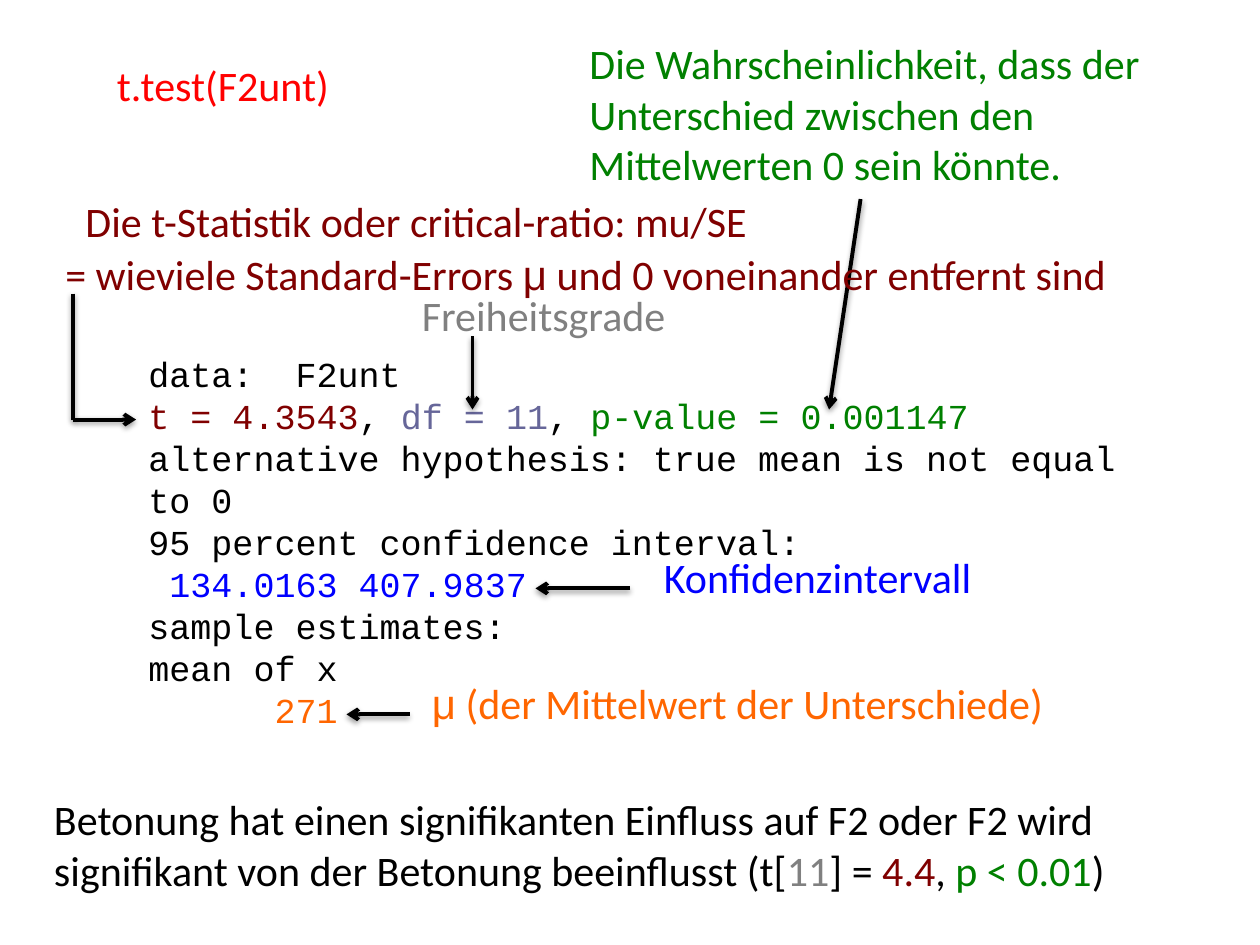
from lxml import etree
from pptx import Presentation
from pptx.dml.color import RGBColor
from pptx.enum.shapes import MSO_CONNECTOR
from pptx.enum.text import MSO_AUTO_SIZE
from pptx.oxml import parse_xml
from pptx.oxml.ns import nsdecls, qn
from pptx.util import Inches, Pt

STRAIGHT = MSO_CONNECTOR.STRAIGHT
FIT_SHAPE = MSO_AUTO_SIZE.SHAPE_TO_FIT_TEXT
BLANK_LAYOUT = 6

BLACK = RGBColor(0x00, 0x00, 0x00)
RED = RGBColor(0xFF, 0x00, 0x00)
MAROON = RGBColor(0x80, 0x00, 0x00)
GREEN = RGBColor(0x00, 0x80, 0x00)
BLUE = RGBColor(0x00, 0x00, 0xFF)
ORANGE = RGBColor(0xFF, 0x66, 0x00)
GRAY = RGBColor(0x80, 0x80, 0x80)
SLATE = RGBColor(0x66, 0x66, 0x99)

SOFT_SHADOW = (
    f'<a:effectLst {nsdecls("a")}>'
    '<a:outerShdw blurRad="40000" dist="20000" dir="5400000" rotWithShape="0">'
    '<a:srgbClr val="000000"><a:alpha val="38000"/></a:srgbClr>'
    '</a:outerShdw></a:effectLst>'
)

# Each paragraph is a list of (text, colour) spans
TEST_OUTPUT = [
    [("data:  F2unt", BLACK)],
    [("t = 4.3543", MAROON), (", ", BLACK), ("df = 11", SLATE),
     (", ", BLACK), ("p-value = 0.001147", GREEN)],
    [("alternative hypothesis: true mean is not equal to 0", BLACK)],
    [("95 percent confidence interval:", BLACK)],
    [(" ", BLACK), ("134.0163 407.9837", BLUE)],
    [("sample estimates:", BLACK)],
    [("mean of x", BLACK)],
    [("      ", BLACK), ("271", ORANGE)],
]
CONCLUSION = [[
    ("Betonung hat einen signifikanten Einfluss auf F2 oder F2 wird "
     "signifikant von der Betonung beeinflusst (t[", BLACK),
    ("11", GRAY), ("] = ", BLACK), ("4.4", MAROON), (", ", BLACK),
    ("p < 0.01", GREEN), (")", BLACK),
]]


def add_span(para, text, *, color, size=24, font="Calibri"):
    span = para.add_run()
    span.text = text
    span.font.name = font
    span.font.size = Pt(size)
    span.font.color.rgb = color


def add_text(shapes, paragraphs, left, top, width, height=0.5, **text_format):
    box = shapes.add_textbox(Inches(left), Inches(top), Inches(width), Inches(height))
    frame = box.text_frame
    frame.word_wrap = True
    frame.auto_size = FIT_SHAPE
    for index, spans in enumerate(paragraphs):
        para = frame.add_paragraph() if index else frame.paragraphs[0]
        for text, color, *font in spans:
            span_format = {"font": font[0]} if font else text_format
            add_span(para, text, color=color, **span_format)


def add_line(shapes, start, end, arrow=True):
    line = shapes.add_connector(STRAIGHT, *(Inches(value) for value in start + end))
    line.line.color.rgb = BLACK
    line.line.width = Pt(2.25)
    if arrow:
        etree.SubElement(line.line._get_or_add_ln(), qn("a:tailEnd"), type="arrow")
    line._element.spPr.append(parse_xml(SOFT_SHADOW))


def add_group(page):
    return page.shapes.add_group_shape().shapes


def main():
    deck = Presentation()
    deck.slide_width, deck.slide_height = Inches(10), Inches(7.5)
    page = deck.slides.add_slide(deck.slide_layouts[BLANK_LAYOUT])

    # Command, its output and the conclusion
    add_text(page.shapes, [[("t.test(F2unt)", RED)]], 0.83, 0.42, 2.17)
    add_text(page.shapes, TEST_OUTPUT, 1.08, 2.75, 8.33, 3.13,
             size=20, font="Courier New")
    add_text(page.shapes, CONCLUSION, 0.33, 6.25, 9.25, 0.91)

    # Note on the p-value
    note = add_group(page)
    add_text(note, [[("Die Wahrscheinlichkeit, dass der Unterschied zwischen den "
                      "Mittelwerten 0 sein könnte.", GREEN)]], 4.58, 0.25, 5.25, 1.31)
    add_line(note, (6.83, 1.58), (6.58, 3.25))

    # Note on the confidence interval
    note = add_group(page)
    add_text(note, [[("Konfidenzintervall", BLUE)]], 5.17, 4.33, 4.08)
    add_line(note, (5, 4.67), (4.25, 4.67))

    # Note on the t statistic, with an elbow made of two lines
    note = add_group(page)
    add_text(note, [[("Die t-Statistik oder critical-ratio: mu/SE", MAROON)]],
             0.58, 1.5, 7.42)
    add_text(note, [[("= wieviele Standard-Errors ", MAROON), ("μ", MAROON, "Arial"),
                     (" und 0 voneinander entfernt sind", MAROON)]], 0.42, 1.92, 8.58)
    add_line(note, (0.58, 2.33), (0.58, 3.33), arrow=False)
    add_line(note, (0.58, 3.33), (1.08, 3.33))

    # Note on the degrees of freedom
    note = add_group(page)
    add_text(note, [[("Freiheitsgrade", GRAY)]], 3.25, 2.25, 2.33)
    add_line(note, (3.75, 2.67), (3.75, 3.25))

    # Note on the mean
    note = add_group(page)
    add_text(note, [[("μ", ORANGE, "Arial"),
                     (" (der Mittelwert der Unterschiede)", ORANGE)]], 3.33, 5.33, 5.83)
    add_line(note, (3.25, 5.67), (2.75, 5.67))

    deck.save("out.pptx")


if __name__ == "__main__":
    main()
